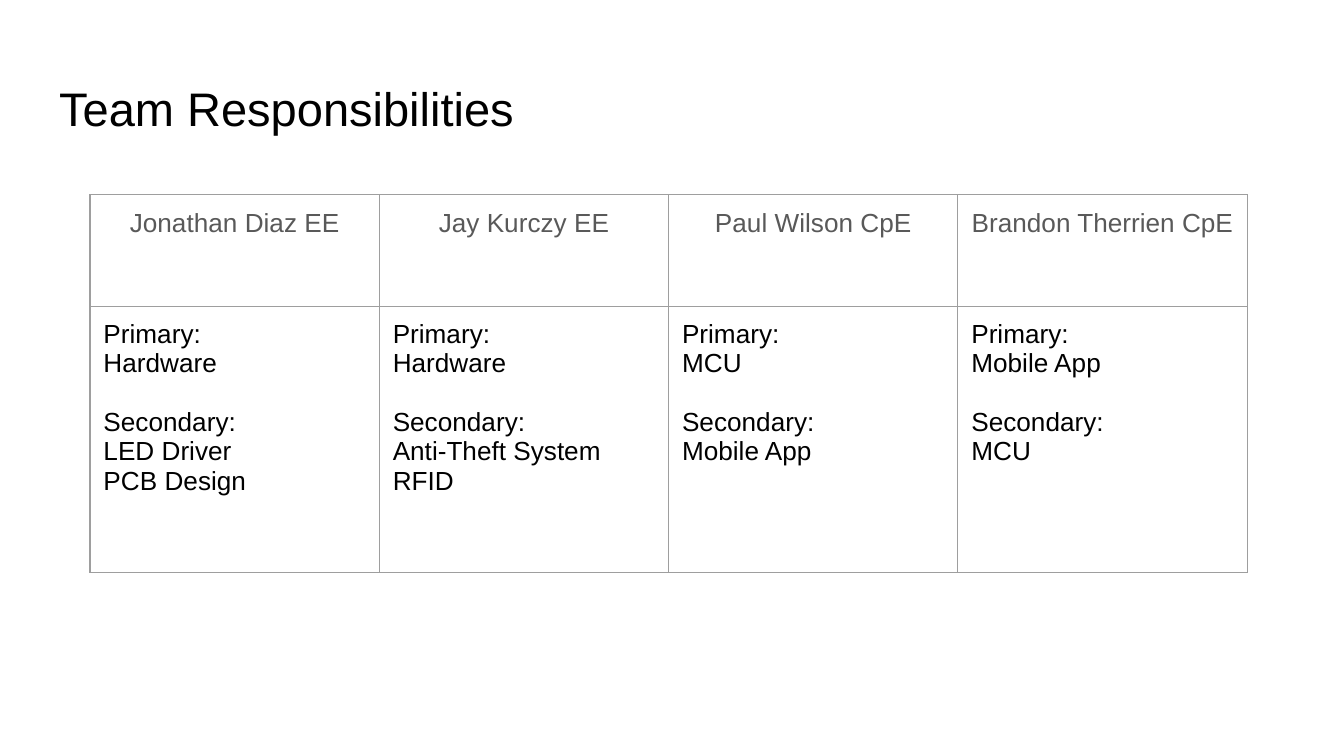
import dataclasses

import lxml.etree
import pptx
import pptx.dml.color
import pptx.enum.text
import pptx.oxml.ns
import pptx.util

Inches = pptx.util.Inches
Align = pptx.enum.text.PP_ALIGN
Anchor = pptx.enum.text.MSO_ANCHOR


@dataclasses.dataclass(frozen=True)
class Theme:
    font: str = "Arial"
    background: str = "FFFFFF"
    ink: str = "000000"
    muted: str = "595959"
    border: str = "9E9E9E"
    border_width: float = 0.75
    title_size: float = 25.2
    body_size: float = 14
    section_gap: float = 15.5
    inset: float = 0.1


def rgb(color):
    return pptx.dml.color.RGBColor.from_string(color)


def write_text(paragraph, text, *, font, size, color, align=Align.LEFT, space_before=0):
    paragraph.alignment = align
    paragraph.space_before = pptx.util.Pt(space_before)
    run = paragraph.add_run()
    run.text = text
    run.font.name = font
    run.font.size = pptx.util.Pt(size)
    run.font.bold = False
    run.font.color.rgb = rgb(color)


class SlideBuilder:
    def __init__(self, slide, theme):
        self.slide = slide
        self.theme = theme
        slide.background.fill.solid()
        slide.background.fill.fore_color.rgb = rgb(theme.background)

    def set_insets(self, target):
        for side in ("left", "top", "right", "bottom"):
            setattr(target, f"margin_{side}", Inches(self.theme.inset))

    def add_title(self, text, left, top, width, height):
        title = self.slide.shapes.title
        title.left, title.top = Inches(left), Inches(top)
        title.width, title.height = Inches(width), Inches(height)
        frame = title.text_frame
        frame.word_wrap = True
        frame.auto_size = pptx.enum.text.MSO_AUTO_SIZE.NONE
        frame.vertical_anchor = Anchor.TOP
        self.set_insets(frame)
        write_text(frame.paragraphs[0], text, font=self.theme.font,
                   size=self.theme.title_size, color=self.theme.ink)

    def add_borders(self, cell):
        properties = cell._tc.get_or_add_tcPr()
        qn = pptx.oxml.ns.qn
        for index, side in enumerate(("lnL", "lnR", "lnT", "lnB")):
            line = lxml.etree.Element(qn(f"a:{side}"))
            line.set("w", str(pptx.util.Pt(self.theme.border_width)))
            fill = lxml.etree.SubElement(line, qn("a:solidFill"))
            lxml.etree.SubElement(fill, qn("a:srgbClr")).set("val", self.theme.border)
            properties.insert(index, line)

    def fill_cell(self, cell, sections, color, align):
        cell.fill.background()
        cell.vertical_anchor = Anchor.TOP
        self.set_insets(cell)
        self.add_borders(cell)
        frame = cell.text_frame
        for section_index, lines in enumerate(sections):
            for line_index, text in enumerate(lines):
                first = section_index == 0 and line_index == 0
                paragraph = frame.paragraphs[0] if first else frame.add_paragraph()
                starts_section = section_index > 0 and line_index == 0
                write_text(paragraph, text, font=self.theme.font,
                           size=self.theme.body_size, color=color, align=align,
                           space_before=self.theme.section_gap if starts_section else 0)

    def add_team_table(self, team, left, top, width, row_heights):
        shape = self.slide.shapes.add_table(
            len(row_heights), len(team), Inches(left), Inches(top),
            Inches(width), Inches(sum(row_heights)))
        table = shape.table
        table.first_row = False
        table.horz_banding = False
        for row, height in zip(table.rows, row_heights):
            row.height = Inches(height)
        for index, (member, primary, secondary) in enumerate(team):
            table.columns[index].width = Inches(width / len(team))
            duties = [["Primary:", *primary], ["Secondary:", *secondary]]
            self.fill_cell(table.cell(0, index), [[member]], self.theme.muted, Align.CENTER)
            self.fill_cell(table.cell(1, index), duties, self.theme.ink, Align.LEFT)


TEAM = [
    ("Jonathan Diaz EE", ["Hardware"], ["LED Driver", "PCB Design"]),
    ("Jay Kurczy EE", ["Hardware"], ["Anti-Theft System", "RFID"]),
    ("Paul Wilson CpE", ["MCU"], ["Mobile App"]),
    ("Brandon Therrien CpE", ["Mobile App"], ["MCU"]),
]


def main():
    presentation = pptx.Presentation()
    presentation.slide_width = Inches(10)
    presentation.slide_height = Inches(10 * 9 / 16)
    title_only = presentation.slide_layouts.get_by_name("Title Only")
    builder = SlideBuilder(presentation.slides.add_slide(title_only), Theme())
    builder.add_title("Team Responsibilities", 0.34, 0.49, 9.32, 0.63)
    builder.add_team_table(TEAM, 0.67, 1.45, 8.61, [0.83, 1.98])
    presentation.save("out.pptx")


if __name__ == "__main__":
    main()
